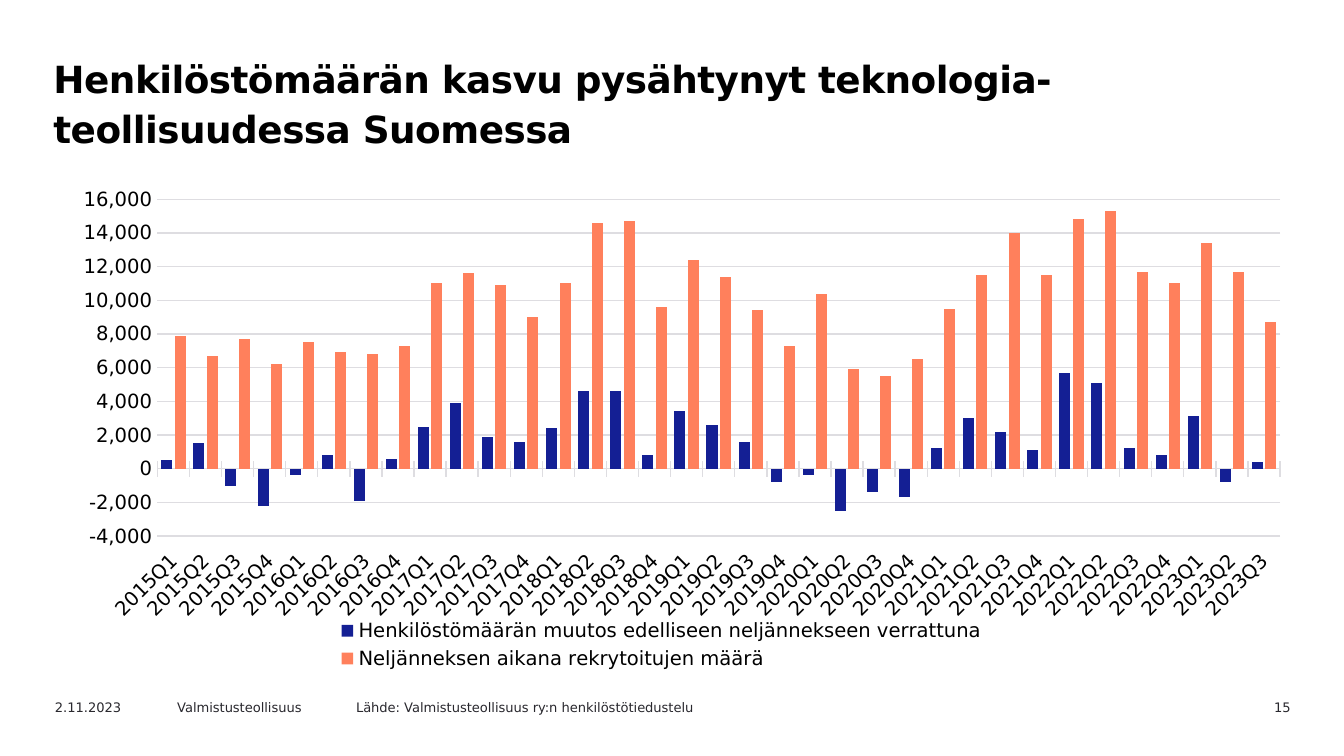
"""Build the slide on personnel growth in the Finnish technology industry."""
from dataclasses import dataclass

from lxml import etree
from pptx import Presentation
from pptx.chart.data import CategoryChartData
from pptx.dml.color import RGBColor
from pptx.enum import chart as ch, text as t
from pptx.oxml.ns import qn
from pptx.util import Cm, Pt

COLORS = {"black": "000000", "footer": "29282E", "grid": "DEDDE1",
          "change": "141F94", "hired": "FF805C"}
FONT = "DejaVu Sans"
PLOT = {"x": 0.096, "y": 0.064, "w": 0.899, "h": 0.663}


@dataclass
class Footer:
    text: str
    left: float
    width: float
    align: t.PP_ALIGN = t.PP_ALIGN.LEFT


@dataclass
class Series:
    name: str
    color: str
    values: tuple[int, ...]


FOOTERS = [
    Footer("2.11.2023", 0.79, 2.54),
    Footer("Valmistusteollisuus", 3.1, 3.6),
    Footer("Lähde: Valmistusteollisuus ry:n henkilöstötiedustelu", 6.48, 8.25),
    Footer("15", 22.25, 2.39, t.PP_ALIGN.RIGHT),
]
SERIES = [
    Series("Henkilöstömäärän muutos edelliseen neljännekseen verrattuna", "change", (
        500, 1500, -1000, -2200, -400, 800, -1900, 600, 2500, 3900, 1900, 1600,
        2400, 4600, 4600, 800, 3400, 2600, 1600, -800, -400, -2500, -1400, -1700,
        1200, 3000, 2200, 1100, 5700, 5100, 1200, 800, 3100, -800, 400)),
    Series("Neljänneksen aikana rekrytoitujen määrä", "hired", (
        7900, 6700, 7700, 6200, 7500, 6900, 6800, 7300, 11000, 11600, 10900, 9000,
        11000, 14600, 14700, 9600, 12400, 11400, 9400, 7300, 10400, 5900, 5500, 6500,
        9500, 11500, 14000, 11500, 14800, 15300, 11700, 11000, 13400, 11700, 8700)),
]
QUARTERS = [f"{2015 + i // 4}Q{i % 4 + 1}" for i in range(len(SERIES[0].values))]


def rgb(name: str) -> RGBColor:
    return RGBColor.from_string(COLORS[name])


def set_font(font, size: float, color: str, bold: bool = False) -> None:
    font.name, font.size, font.bold = FONT, Pt(size), bold
    font.color.rgb = rgb(color)


def set_grid_line(line) -> None:
    line.color.rgb = rgb("grid")
    line.width = Pt(0.75)


def add_title(s, content: str) -> None:
    sp = s.shapes.title
    sp.left, sp.top, sp.width, sp.height = Cm(0.71), Cm(0.79), Cm(22.2), Cm(1.8)
    tf = sp.text_frame
    tf.text = content
    tf.word_wrap, tf.auto_size = True, t.MSO_AUTO_SIZE.NONE
    tf.vertical_anchor = t.MSO_ANCHOR.TOP
    tf.margin_left, tf.margin_top = Cm(0.3), Cm(0.16)
    p = tf.paragraphs[0]
    p.alignment, p.line_spacing, p.space_before = t.PP_ALIGN.LEFT, Pt(27), Pt(0)
    set_font(p.font, 20, "black", True)
    p.runs[0].font._element.set("spc", "-30")


def add_footer(s, footer: Footer) -> None:
    sp = s.shapes.add_textbox(Cm(footer.left), Cm(13.13), Cm(footer.width), Cm(0.46))
    tf = sp.text_frame
    tf.text = footer.text
    tf.word_wrap, tf.vertical_anchor = True, t.MSO_ANCHOR.MIDDLE
    tf.margin_top = tf.margin_bottom = 0
    p = tf.paragraphs[0]
    p.alignment = footer.align
    set_font(p.font, 7, "footer")


def place_plot(chart) -> None:
    area = chart._chartSpace.find(".//" + qn("c:plotArea"))
    for old in area.findall(qn("c:layout")):
        area.remove(old)
    layout = etree.Element(qn("c:layout"))
    manual = etree.SubElement(layout, qn("c:manualLayout"))
    values = {"layoutTarget": "inner", "xMode": "edge", "yMode": "edge", **PLOT}
    for tag, value in values.items():
        etree.SubElement(manual, qn(f"c:{tag}")).set("val", str(value))
    area.insert(0, layout)


def add_chart(s) -> None:
    data = CategoryChartData(number_format="#,##0")
    data.categories = QUARTERS
    for series in SERIES:
        data.add_series(series.name, series.values)
    chart = s.shapes.add_chart(ch.XL_CHART_TYPE.COLUMN_CLUSTERED, Cm(0.71), Cm(3.15),
                               Cm(23.6), Cm(9.6), data).chart
    set_font(chart.font, 10, "footer")
    chart.has_title = False
    place_plot(chart)

    plot = chart.plots[0]
    plot.gap_width, plot.overlap, plot.vary_by_categories = 70, -21, False
    for bars, series in zip(plot.series, SERIES):
        bars.invert_if_negative = False
        bars.format.fill.solid()
        bars.format.fill.fore_color.rgb = rgb(series.color)

    cat = chart.category_axis
    cat.tick_label_position = ch.XL_TICK_LABEL_POSITION.LOW
    cat.major_tick_mark, cat.minor_tick_mark = ch.XL_TICK_MARK.CROSS, ch.XL_TICK_MARK.NONE
    set_grid_line(cat.format.line)
    set_font(cat.tick_labels.font, 10.5, "black")
    cat._element.find(".//" + qn("a:bodyPr")).set("rot", "-2700000")

    val = chart.value_axis
    val.minimum_scale, val.maximum_scale, val.major_unit = -4000, 16000, 2000
    val.major_tick_mark = val.minor_tick_mark = ch.XL_TICK_MARK.NONE
    val.format.line.fill.background()
    set_grid_line(val.major_gridlines.format.line)
    val.tick_labels.number_format = "#,##0"
    val.tick_labels.number_format_is_linked = False
    set_font(val.tick_labels.font, 10.5, "black")

    chart.has_legend = True
    chart.legend.position = ch.XL_LEGEND_POSITION.BOTTOM
    chart.legend.include_in_layout = False
    set_font(chart.legend.font, 10.5, "black")


def main() -> None:
    prs = Presentation()
    prs.slide_width, prs.slide_height = Cm(25.4), Cm(14.28)
    s = prs.slides.add_slide(prs.slide_layouts[5])
    add_title(s, "Henkilöstömäärän kasvu pysähtynyt teknologia-teollisuudessa Suomessa")
    for footer in FOOTERS:
        add_footer(s, footer)
    add_chart(s)
    prs.save("out.pptx")


if __name__ == "__main__":
    main()
